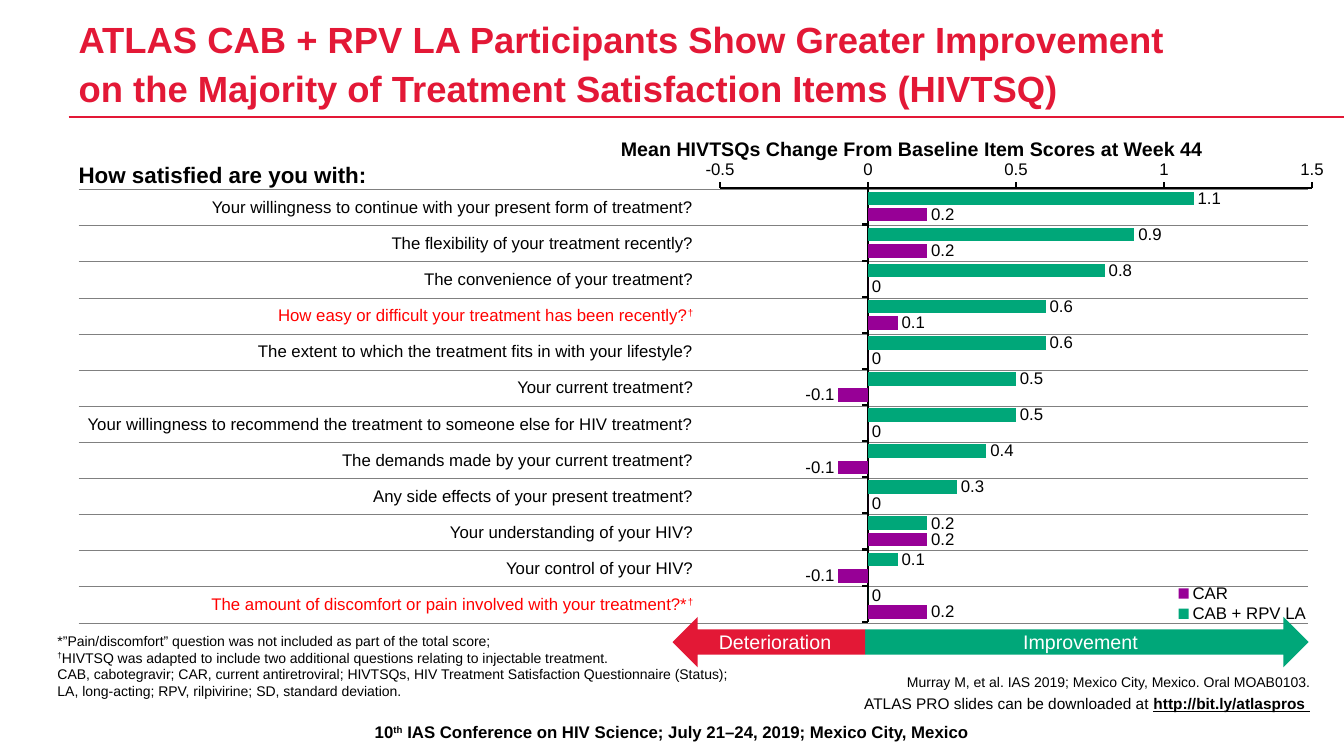
import pptx
import pptx.chart.data
import pptx.dml.color
import pptx.enum.chart
import pptx.enum.shapes
import pptx.enum.text
import pptx.oxml
import pptx.oxml.ns
import pptx.util
from pptx.oxml.ns import qn

PX = 9144  # 100 px to the inch
RGB = pptx.dml.color.RGBColor.from_string
ALIGN = pptx.enum.text.PP_ALIGN
ANCHOR = pptx.enum.text.MSO_ANCHOR
SHAPE = pptx.enum.shapes.MSO_SHAPE
CHART = pptx.enum.chart

THEME = {
    "font": "Arial",
    "red": RGB("E31836"), "green": RGB("00A779"), "purple": RGB("970096"),
    "black": RGB("000000"), "white": RGB("FFFFFF"), "alert": RGB("FF0000"),
    "rule": "808080",
    "title": 26, "heading": 16, "arrow": 14, "body": 12, "link": 11, "note": 10,
}


def write(frame, paragraphs, size, color="black", bold=False,
          align=ALIGN.LEFT, anchor=ANCHOR.TOP):
    """Fill a frame; each run is (text, options), and "\n" is a line break."""
    frame.word_wrap = True
    frame.vertical_anchor = anchor
    frame.margin_left = frame.margin_right = frame.margin_top = frame.margin_bottom = 0
    for index, runs in enumerate(paragraphs):
        para = frame.paragraphs[0] if index == 0 else frame.add_paragraph()
        para.alignment = align
        for text, options in runs:
            if text == "\n":
                para.add_line_break()
                continue
            span = para.add_run()
            span.text = text
            span.font.name = THEME["font"]
            span.font.size = pptx.util.Pt(THEME[options.get("size", size)])
            span.font.bold = options.get("bold", bold)
            span.font.underline = options.get("underline")
            span.font.color.rgb = THEME[color]
            if options.get("raised"):
                span.font._element.set("baseline", "30000")


def chart_layout(parent, index, x, y, width, height, inner=False):
    """Give a chart part a fixed place, in fractions of the chart."""
    for old in parent.findall(qn("c:layout")):
        parent.remove(old)
    target = '<c:layoutTarget val="inner"/>' if inner else ""
    parent.insert(index, pptx.oxml.parse_xml(
        f'<c:layout {pptx.oxml.ns.nsdecls("c")}><c:manualLayout>{target}'
        '<c:xMode val="edge"/><c:yMode val="edge"/>'
        f'<c:x val="{x}"/><c:y val="{y}"/><c:w val="{width}"/><c:h val="{height}"/>'
        '</c:manualLayout></c:layout>'))


deck = pptx.Presentation()
deck.slide_width, deck.slide_height = 1333 * PX, 750 * PX
page = deck.slides.add_slide(deck.slide_layouts[6])

# Rule under the title
rule = page.shapes.add_connector(
    pptx.enum.shapes.MSO_CONNECTOR.STRAIGHT, 68 * PX, 116 * PX, 1333 * PX, 116 * PX)
rule.line.color.rgb = THEME["red"]
rule.line.width = pptx.util.Pt(2)
rule._element.spPr.append(pptx.oxml.parse_xml(
    f'<a:effectLst {pptx.oxml.ns.nsdecls("a")}/>'))

# Items: question, dagger shown, CAB + RPV LA score, CAR score
ITEMS = [
    ("Your willingness to continue with your present form of treatment?", False, 1.1, 0.2),
    ("The flexibility of your treatment recently?", False, 0.9, 0.2),
    ("The convenience of your treatment?", False, 0.8, 0),
    ("How easy or difficult your treatment has been recently?", True, 0.6, 0.1),
    ("The extent to which the treatment fits in with your lifestyle?", False, 0.6, 0),
    ("Your current treatment?", False, 0.5, -0.1),
    ("Your willingness to recommend the treatment to someone else for HIV treatment?",
     False, 0.5, 0),
    ("The demands made by your current treatment?", False, 0.4, -0.1),
    ("Any side effects of your present treatment?", False, 0.3, 0),
    ("Your understanding of your HIV?", False, 0.2, 0.2),
    ("Your control of your HIV?", False, 0.1, -0.1),
    ("The amount of discomfort or pain involved with your treatment?*", True, 0, 0.2),
]

# Question table
table = page.shapes.add_table(
    len(ITEMS), 2, 78 * PX, 188 * PX, 1219 * PX, 430 * PX).table
table.first_row = table.horz_banding = False
for row, (question, dagger, _, _) in enumerate(ITEMS):
    runs = [(question, {})] + ([("†", {"raised": True})] if dagger else [])
    for column, paragraphs in enumerate(([runs], [[]])):
        cell = table.cell(row, column)
        write(cell.text_frame, paragraphs, "body", "alert" if dagger else "black",
              align=ALIGN.RIGHT)
        cell.margin_left = cell.margin_right = cell.margin_top = cell.margin_bottom = 0
        cell.vertical_anchor = ANCHOR.MIDDLE
        cell.fill.background()
        gray = f'<a:solidFill><a:srgbClr val="{THEME["rule"]}"/></a:solidFill>'
        borders = [("lnL", "<a:noFill/>"), ("lnR", "<a:noFill/>"),
                   ("lnT", gray), ("lnB", gray)]
        for index, (side, fill) in enumerate(borders):
            cell._tc.get_or_add_tcPr().insert(index, pptx.oxml.parse_xml(
                f'<a:{side} {pptx.oxml.ns.nsdecls("a")} w="6350">{fill}</a:{side}>'))

# Text boxes: place, paragraphs, size, colour, bold, alignment, anchor
TITLE = ("ATLAS CAB + RPV LA Participants Show Greater Improvement "
         "on the Majority of Treatment Satisfaction Items (HIVTSQ)")
TEXTS = [
    ((78, 17, 1100, 92), [[(TITLE, {})]],
     "title", "red", True, ALIGN.LEFT, ANCHOR.BOTTOM),
    ((80, 668, 1219, 20),
     [[("Murray M, et al. IAS 2019; Mexico City, Mexico. Oral MOAB0103.", {})],
      [("ATLAS PRO slides can be downloaded at ", {"size": "link"}),
       ("http://bit.ly/atlaspros ", {"size": "link", "bold": True, "underline": True})]],
     "note", "black", False, ALIGN.RIGHT, ANCHOR.TOP),
    ((57, 654, 1219, 40),
     [[("*”Pain/discomfort” question was not included as part of the total score;", {})],
      [("†", {"raised": True}),
       ("HIVTSQ was adapted to include two additional questions relating to "
        "injectable treatment.", {}),
       ("\n", {}),
       ("CAB, cabotegravir; CAR, current antiretroviral; HIVTSQs, HIV Treatment "
        "Satisfaction Questionnaire (Status);", {})],
      [("LA, long-acting; RPV, rilpivirine; SD, standard deviation.", {})]],
     "note", "black", False, ALIGN.LEFT, ANCHOR.BOTTOM),
    ((78, 160, 437, 27), [[("How satisfied are you with:", {})]],
     "heading", "black", True, ALIGN.LEFT, ANCHOR.TOP),
    ((533, 136, 743, 24),
     [[("Mean HIVTSQs Change From Baseline Item Scores at Week 44", {})]],
     "arrow", "black", True, ALIGN.CENTER, ANCHOR.TOP),
    ((0, 716, 1333, 20),
     [[("10", {}), ("th", {"raised": True}),
       (" IAS Conference on HIV Science; July 21–24, 2019; Mexico City, Mexico", {})]],
     "body", "black", True, ALIGN.CENTER, ANCHOR.MIDDLE),
]
boxes = []
for place, paragraphs, *style in TEXTS:
    box = page.shapes.add_textbox(*(value * PX for value in place))
    write(box.text_frame, paragraphs, *style)
    boxes.append(box)
title, citation = boxes[:2]
title.text_frame.paragraphs[0].line_spacing = pptx.util.Pt(35)
for para in citation.text_frame.paragraphs:
    para.space_after = pptx.util.Pt(3)

# Direction arrows
for label, kind, left, width, color in [
        ("Improvement", SHAPE.RIGHT_ARROW, 858, 440, "green"),
        ("Deterioration", SHAPE.LEFT_ARROW, 667, 191, "red")]:
    arrow = page.shapes.add_shape(kind, left * PX, 612 * PX, width * PX, 50 * PX)
    arrow.shadow.inherit = False
    arrow.fill.solid()
    arrow.fill.fore_color.rgb = THEME[color]
    arrow.line.fill.background()
    write(arrow.text_frame, [[(label, {})]], "arrow", "white",
          align=ALIGN.CENTER, anchor=ANCHOR.MIDDLE)

# Bar chart
scores = pptx.chart.data.CategoryChartData()
scores.categories = [str(number + 1) for number in range(len(ITEMS))]
scores.add_series("CAB + RPV LA", [item[2] for item in ITEMS])
scores.add_series("CAR", [item[3] for item in ITEMS])
chart = page.shapes.add_chart(CHART.XL_CHART_TYPE.BAR_CLUSTERED, 689 * PX, 151 * PX,
                              628 * PX, 474 * PX, scores).chart
chart.has_title = False
plot = chart.plots[0]
plot.gap_width, plot.overlap, plot.vary_by_categories = 45, -20, False
for series, color in zip(plot.series, ("green", "purple")):
    series.format.fill.solid()
    series.format.fill.fore_color.rgb = THEME[color]
    series.invert_if_negative = False
    series.data_labels.show_value = True
    series.data_labels.position = CHART.XL_LABEL_POSITION.OUTSIDE_END

questions, values = chart.category_axis, chart.value_axis
questions.reverse_order = True
questions.tick_label_position = CHART.XL_TICK_LABEL_POSITION.NONE
values.minimum_scale, values.maximum_scale, values.major_unit = -0.5, 1.5, 0.5
for axis in (questions, values):
    axis.has_major_gridlines = False
    axis.major_tick_mark = CHART.XL_TICK_MARK.OUTSIDE
    axis.format.line.color.rgb = THEME["black"]
    axis.format.line.width = pptx.util.Pt(1.5)

chart.has_legend = True
chart.legend.position = CHART.XL_LEGEND_POSITION.RIGHT
chart.legend.include_in_layout = False
for part in (chart, values.tick_labels, chart.legend,
             *(series.data_labels for series in plot.series)):
    part.font.name = THEME["font"]
    part.font.size = pptx.util.Pt(THEME["body"])
    part.font.color.rgb = THEME["black"]

# Chart placement and clear background
area = chart._chartSpace.chart.plotArea
chart_layout(area, 0, 0.04, 0.076, 0.935, 0.907, inner=True)
chart_layout(chart.legend._element, 1, 0.75, 0.9, 0.23, 0.09)
CLEAR = (f'<c:spPr {pptx.oxml.ns.nsdecls("c", "a")}><a:noFill/>'
         '<a:ln><a:noFill/></a:ln></c:spPr>')
area.append(pptx.oxml.parse_xml(CLEAR))
chart._chartSpace.chart.addnext(pptx.oxml.parse_xml(CLEAR))

deck.save("out.pptx")
